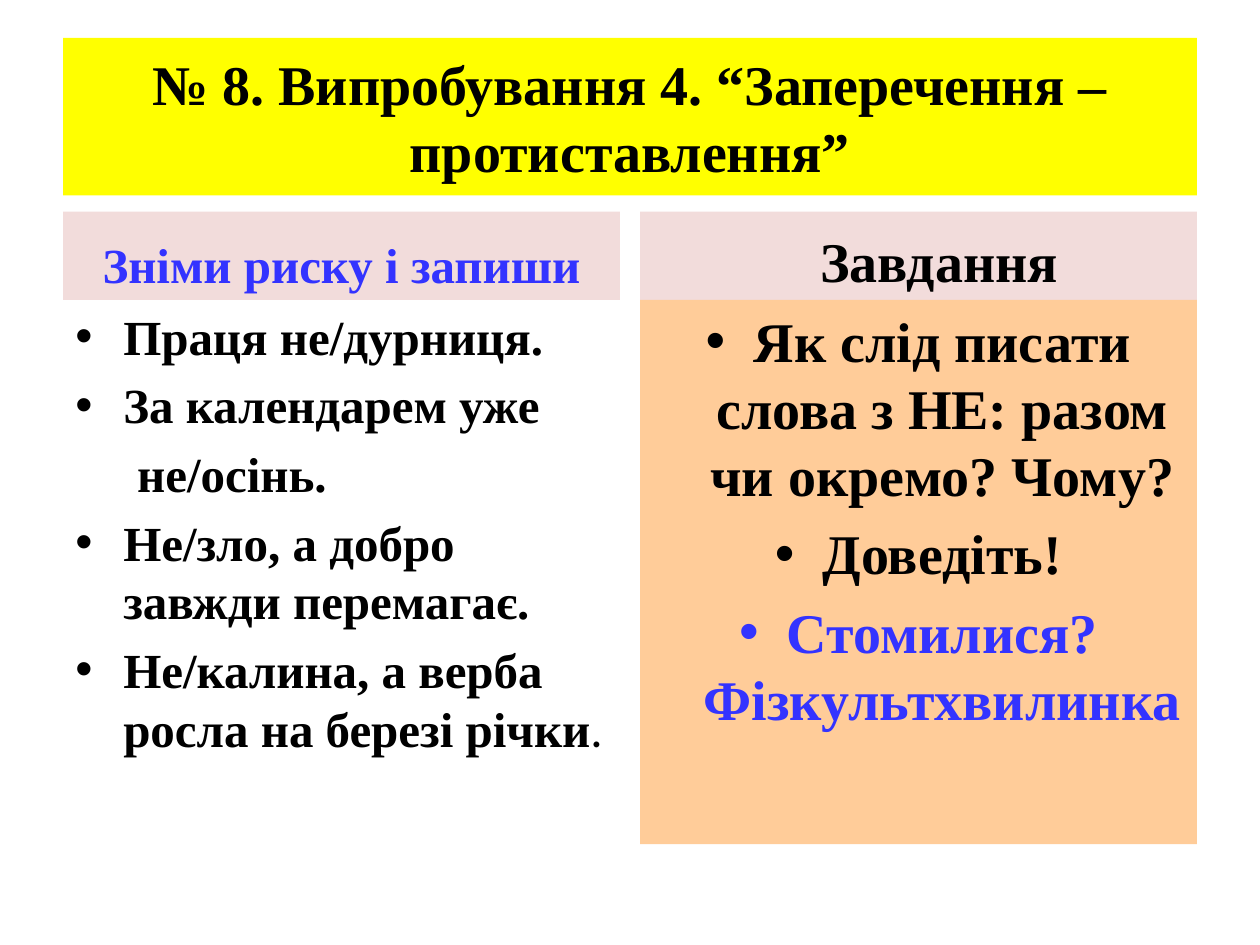
from lxml import etree
from pptx import Presentation
from pptx import util as u
from pptx.dml.color import RGBColor
from pptx.enum import text
from pptx.oxml import ns

# Slide grid, in inches
WIDTH, HEIGHT = 10, 7.5
MARGIN, GAP = 0.5, 0.16
COLUMN = (WIDTH - 2 * MARGIN - GAP) / 2
TITLE_TOP, TITLE_ROW = 0.3, 1.25
HEAD_TOP, HEAD_ROW, BODY_ROW = 1.68, 0.7, 4.32
HANG = 0.38

FONT = "Times New Roman"
BLACK, BLUE = "000000", "3333FF"
YELLOW, PINK, PEACH = "FFFF00", "F2DCDB", "FFCC99"
CENTER, LEFT = text.PP_ALIGN.CENTER, text.PP_ALIGN.LEFT


def color(value):
    return RGBColor.from_string(value)


def fill_box(shape, value):
    shape.fill.solid()
    shape.fill.fore_color.rgb = color(value)


def prepare_frame(shape, anchor):
    frame = shape.text_frame
    frame.word_wrap = True
    frame.auto_size = text.MSO_AUTO_SIZE.NONE
    frame.vertical_anchor = anchor
    return frame


def format_para(para, size, value=BLACK, align=LEFT):
    para.alignment = align
    font = para.font
    font.name, font.size, font.bold = FONT, u.Pt(size), True
    font.color.rgb = color(value)


def indent_para(para, left, first=0, bullet=False):
    props = para._p.get_or_add_pPr()
    props.set("marL", str(u.Inches(left)))
    props.set("indent", str(u.Inches(first)))
    if bullet:
        face = etree.Element(ns.qn("a:buFont"), typeface="Arial")
        mark = etree.Element(ns.qn("a:buChar"), char="•")
        for element in (face, mark):
            props.insert_element_before(element, "a:tabLst", "a:defRPr", "a:extLst")


def add_title(page, box, wording):
    title = page.shapes.title
    title.left, title.top, title.width, title.height = map(u.Inches, box)
    fill_box(title, YELLOW)
    para = prepare_frame(title, text.MSO_ANCHOR.MIDDLE).paragraphs[0]
    para.text = wording
    format_para(para, 32, align=CENTER)


def add_heading(page, box, wording, size, value, left=0):
    heading = page.shapes.add_textbox(*map(u.Inches, box))
    fill_box(heading, PINK)
    para = prepare_frame(heading, text.MSO_ANCHOR.BOTTOM).paragraphs[0]
    para.text = wording
    format_para(para, size, value, CENTER)
    indent_para(para, left)


def add_list(page, box, items, size, align=LEFT, fill=None):
    """Each item is (wording, colour, bulleted)."""
    body = page.shapes.add_textbox(*map(u.Inches, box))
    if fill:
        fill_box(body, fill)
    frame = prepare_frame(body, text.MSO_ANCHOR.TOP)
    for index, (wording, value, bulleted) in enumerate(items):
        para = frame.add_paragraph() if index else frame.paragraphs[0]
        para.text = wording
        format_para(para, size, value, align)
        para.space_before = u.Pt(size * 0.2)
        if bulleted:
            indent_para(para, HANG, -HANG, bullet=True)
        else:
            indent_para(para, HANG + 0.11)
    return frame


def main():
    deck = Presentation()
    deck.slide_width, deck.slide_height = u.Inches(WIDTH), u.Inches(HEIGHT)
    page = deck.slides.add_slide(deck.slide_layouts[5])

    add_title(page, (MARGIN, TITLE_TOP, WIDTH - 2 * MARGIN, TITLE_ROW),
              "№ 8. Випробування 4. “Заперечення – протиставлення”")

    head_boxes, body_boxes = [], []
    for column in range(2):
        left = MARGIN + column * (COLUMN + GAP)
        head_boxes.append((left, HEAD_TOP, COLUMN, HEAD_ROW))
        body_boxes.append((left, HEAD_TOP + HEAD_ROW, COLUMN, BODY_ROW))

    # Left column: sentences to rewrite
    add_heading(page, head_boxes[0], "Зніми риску і запиши", 28, BLUE)
    sentences = add_list(page, body_boxes[0], [
        ("Праця не/дурниця.", BLACK, True),
        ("За календарем уже", BLACK, True),
        ("не/осінь.", BLACK, False),
        ("Не/зло, а добро завжди перемагає.", BLACK, True),
        ("Не/калина, а верба росла на березі річки", BLACK, True),
    ], 28)
    period = sentences.paragraphs[-1].add_run()
    period.text = "."
    period.font.name, period.font.bold = "Calibri", False

    # Right column: the task
    add_heading(page, head_boxes[1], "Завдання", 32, BLACK, left=0.33)
    add_list(page, body_boxes[1], [
        ("Як слід писати слова з НЕ: разом чи окремо? Чому?", BLACK, True),
        ("Доведіть!", BLACK, True),
        ("Стомилися? Фізкультхвилинка", BLUE, True),
    ], 32, CENTER, PEACH)

    deck.save("out.pptx")


if __name__ == "__main__":
    main()
